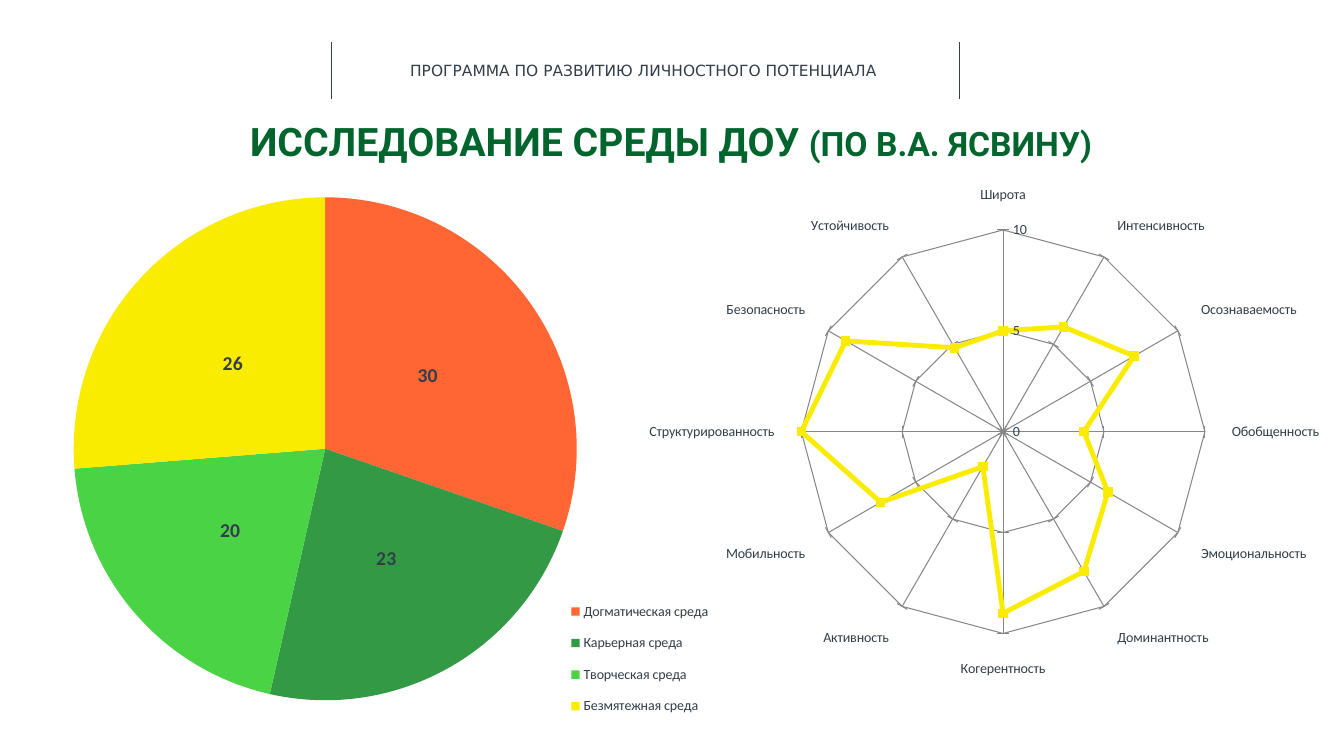
from dataclasses import dataclass

from lxml import etree
from pptx import Presentation
from pptx import util as u
from pptx.chart import data as chart_data
from pptx.dml.color import RGBColor
from pptx.enum import chart as charts, shapes, text
from pptx.oxml import parse_xml
from pptx.oxml.ns import nsdecls, qn


@dataclass(frozen=True)
class Theme:
    """Colours, fonts and type sizes of the slide."""
    ink: str = "333E48"
    title: str = "00642D"
    grid: str = "878787"
    accent: str = "FAEC00"
    sectors: tuple = ("FF6633", "339945", "49D345", "FAEC00")
    header_font: str = "DejaVu Sans"
    title_font: str = "Roboto"
    chart_font: str = "Calibri"
    header_size: int = 11
    title_size: int = 28
    title_note_size: int = 24
    chart_size: int = 10
    value_size: int = 14


THEME = Theme()

ENVIRONMENTS = {
    "Догматическая среда": 30,
    "Карьерная среда": 23,
    "Творческая среда": 20,
    "Безмятежная среда": 26,
}
QUALITIES = {
    "Широта": 5,
    "Интенсивность": 6,
    "Осознаваемость": 7.5,
    "Обобщенность": 4,
    "Эмоциональность": 6,
    "Доминантность": 8,
    "Когерентность": 9,
    "Активность": 2,
    "Мобильность": 7,
    "Структурированность": 10,
    "Безопасность": 9,
    "Устойчивость": 4.8,
}


def inches(*lengths):
    """Turn numbers into lengths in inches."""
    return [u.Inches(length) for length in lengths]


def style_font(font, size, color, name=None, bold=None):
    """Set the size, colour, face and weight of a font."""
    font.size = u.Pt(size)
    font.color.rgb = RGBColor.from_string(color)
    font.bold = bold
    if name:
        font.name = name


def style_line(line, color, width):
    """Set the colour and width of a line."""
    line.color.rgb = RGBColor.from_string(color)
    line.width = u.Pt(width)


def add_divider(slide, left):
    """Draw a vertical rule beside the header."""
    divider = slide.shapes.add_connector(
        shapes.MSO_CONNECTOR.STRAIGHT, *inches(left, 0.42, left, 0.98))
    style_line(divider.line, THEME.ink, 0.5)
    etree.SubElement(divider._element.spPr, qn("a:effectLst"))


def add_header(slide, wording):
    """Write the programme name at the top."""
    frame = slide.shapes.add_textbox(*inches(3.97, 0.56, 4.87, 0.29)).text_frame
    frame.word_wrap = False
    paragraph = frame.paragraphs[0]
    paragraph.text = wording
    style_font(paragraph.font, THEME.header_size, THEME.ink, THEME.header_font)


def add_title(slide, wording, note):
    """Write the centred title with a smaller note after it."""
    frame = slide.shapes.add_textbox(*inches(0, 1.22, 13.31, 0.42)).text_frame
    frame.word_wrap = True
    frame.margin_left = frame.margin_right = frame.margin_top = frame.margin_bottom = 0
    frame.vertical_anchor = text.MSO_ANCHOR.MIDDLE
    paragraph = frame.paragraphs[0]
    paragraph.alignment = text.PP_ALIGN.CENTER
    paragraph.line_spacing = 0.9
    for words, size in ((wording, THEME.title_size), (note, THEME.title_note_size)):
        run = paragraph.add_run()
        run.text = words
        style_font(run.font, size, THEME.title, THEME.title_font, True)


def place_part(part, left, top, width, height, inner=False):
    """Place a plot area or legend by fractions of its chart."""
    target = '<c:layoutTarget val="inner"/>' if inner else ""
    layout = parse_xml(
        f'<c:layout {nsdecls("c")}><c:manualLayout>{target}'
        '<c:xMode val="edge"/><c:yMode val="edge"/>'
        f'<c:x val="{left}"/><c:y val="{top}"/><c:w val="{width}"/><c:h val="{height}"/>'
        '</c:manualLayout></c:layout>')
    for previous in part.findall(qn("c:layout")):
        part.remove(previous)
    legend_position = part.find(qn("c:legendPos"))
    if legend_position is None:
        part.insert(0, layout)
    else:
        legend_position.addnext(layout)


def add_chart(slide, kind, values, box, plot_box):
    """Add a one-series chart with the shared font and a fixed plot area."""
    data = chart_data.CategoryChartData()
    data.categories = list(values)
    data.add_series("Series 1", list(values.values()))
    chart = slide.shapes.add_chart(kind, *inches(*box), data).chart
    chart.has_title = False
    chart.has_legend = False
    style_font(chart.font, THEME.chart_size, THEME.ink, THEME.chart_font)
    chart.plots[0].vary_by_categories = kind == charts.XL_CHART_TYPE.PIE
    plot_area = chart._chartSpace.chart.plotArea
    place_part(plot_area, *plot_box, inner=True)
    return chart


def add_environment_pie(slide):
    """Add the pie of environment types."""
    chart = add_chart(slide, charts.XL_CHART_TYPE.PIE, ENVIRONMENTS,
                      (0.43, 1.43, 7.17, 5.87), (0.04, 0.09, 0.7, 0.85))
    plot = chart.plots[0]
    for index, color in enumerate(THEME.sectors):
        fill = plot.series[0].points[index].format.fill
        fill.solid()
        fill.fore_color.rgb = RGBColor.from_string(color)
    plot.has_data_labels = True
    labels = plot.data_labels
    labels.show_value = True
    labels.show_percentage = False
    labels.number_format = "0"
    labels.number_format_is_linked = False
    labels.position = charts.XL_LABEL_POSITION.CENTER
    style_font(labels.font, THEME.value_size, THEME.ink, THEME.chart_font, True)
    chart.has_legend = True
    legend = chart.legend
    legend.position = charts.XL_LEGEND_POSITION.RIGHT
    legend.include_in_layout = False
    style_font(legend.font, THEME.chart_size, THEME.ink, THEME.chart_font)
    place_part(legend._element, 0.7, 0.75, 0.25, 0.24)


def add_quality_radar(slide):
    """Add the radar of environment qualities."""
    chart = add_chart(slide, charts.XL_CHART_TYPE.RADAR_MARKERS, QUALITIES,
                      (6.16, 1.43, 7.15, 5.65), (0.25, 0.15, 0.56, 0.71))
    scale = chart.value_axis
    scale.minimum_scale, scale.maximum_scale, scale.major_unit = 0, 10, 5
    for axis in (chart.category_axis, scale):
        axis.has_major_gridlines = True
        axis.major_tick_mark = charts.XL_TICK_MARK.CROSS
        style_line(axis.major_gridlines.format.line, THEME.grid, 0.75)
        style_line(axis.format.line, THEME.grid, 0.75)
    series = chart.plots[0].series[0]
    series.smooth = False
    style_line(series.format.line, THEME.accent, 3.5)
    marker = series.marker
    marker.style = charts.XL_MARKER_STYLE.SQUARE
    marker.size = 6
    marker.format.fill.solid()
    marker.format.fill.fore_color.rgb = RGBColor.from_string(THEME.accent)
    style_line(marker.format.line, THEME.accent, 0.75)


def main():
    """Build the slide and save it."""
    presentation = Presentation()
    presentation.slide_width, presentation.slide_height = inches(13.33, 7.5)
    slide = presentation.slides.add_slide(presentation.slide_layouts[6])
    for left in (3.29, 9.52):
        add_divider(slide, left)
    add_header(slide, "ПРОГРАММА ПО РАЗВИТИЮ ЛИЧНОСТНОГО ПОТЕНЦИАЛА")
    add_title(slide, "ИССЛЕДОВАНИЕ СРЕДЫ ДОУ ", "(ПО В.А. ЯСВИНУ)")
    add_environment_pie(slide)
    add_quality_radar(slide)
    presentation.save("out.pptx")


if __name__ == "__main__":
    main()
